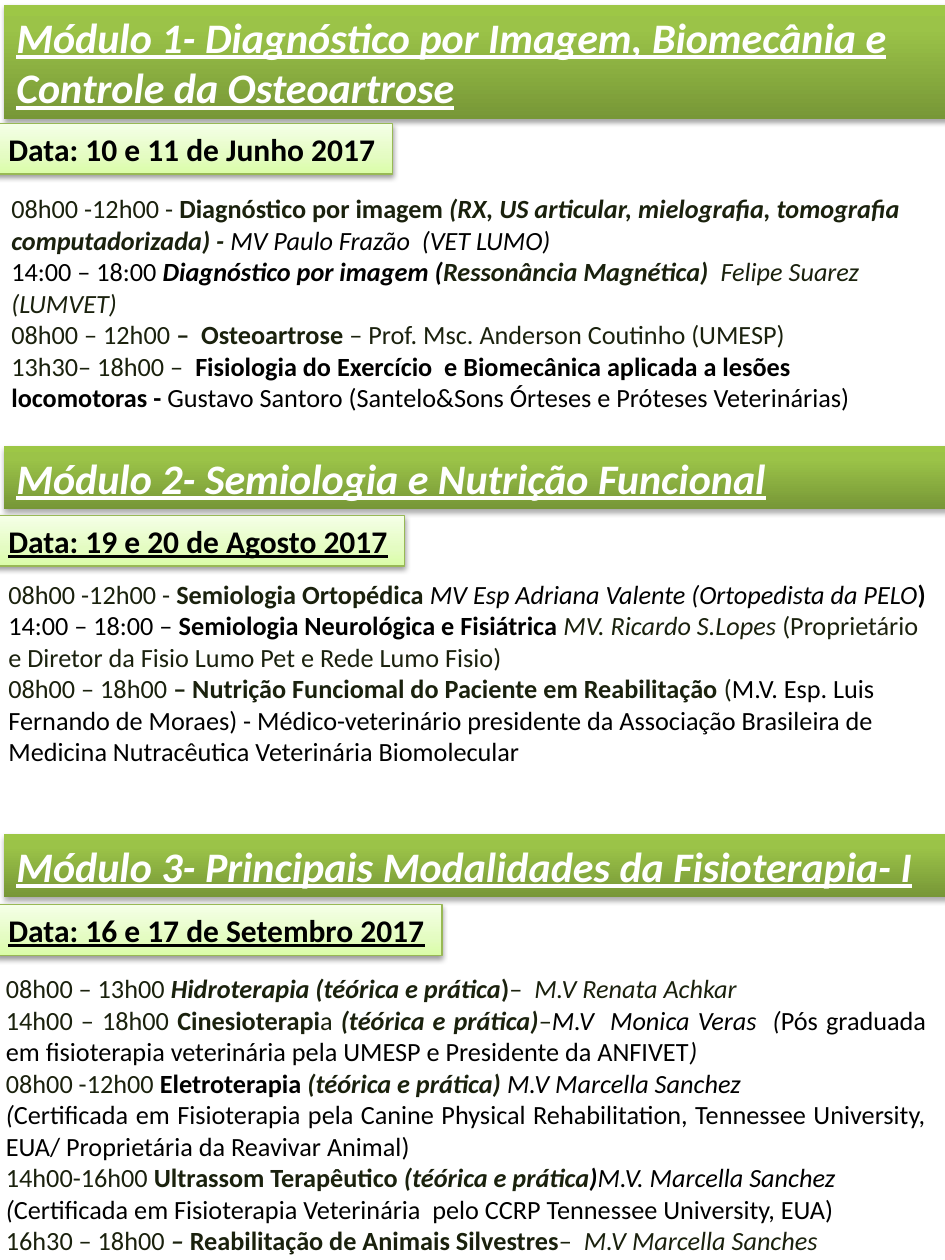
from copy import deepcopy

from lxml import etree
from pptx import Presentation
from pptx.dml.color import RGBColor
from pptx.enum.shapes import MSO_SHAPE
from pptx.enum.text import MSO_ANCHOR, MSO_AUTO_SIZE, PP_ALIGN
from pptx.oxml.ns import qn
from pptx.util import Cm, Pt

RECTANGLE = MSO_SHAPE.RECTANGLE
TOP = MSO_ANCHOR.TOP
GROW = MSO_AUTO_SIZE.SHAPE_TO_FIT_TEXT
LEFT, JUSTIFY = PP_ALIGN.LEFT, PP_ALIGN.JUSTIFY

WHITE = RGBColor(0xFF, 0xFF, 0xFF)
BLACK = RGBColor(0x00, 0x00, 0x00)
OLIVE = RGBColor(0x1A, 0x21, 0x0D)
TAG_EDGE = RGBColor(0x98, 0xB9, 0x55)
BANNER_STOPS = [
    (0, RGBColor(0x77, 0x97, 0x37)),
    (0.8, RGBColor(0x9B, 0xC3, 0x48)),
    (1, RGBColor(0x9D, 0xC7, 0x46)),
]
TAG_STOPS = [
    (0, RGBColor(0xDA, 0xFD, 0xA7)),
    (0.35, RGBColor(0xE4, 0xFC, 0xC2)),
    (1, RGBColor(0xF5, 0xFF, 0xE7)),
]

O, OB, OI, OBI = (OLIVE, ""), (OLIVE, "b"), (OLIVE, "i"), (OLIVE, "bi")
K, KB, KI, KBI = (BLACK, ""), (BLACK, "b"), (BLACK, "i"), (BLACK, "bi")

MODULES = [
    {
        "title": ("Módulo 1- Diagnóstico por Imagem, Biomecânia e Controle da Osteoartrose", 0.1, 2.31),
        "date": ("Data: 10 e 11 de Junho 2017", 2.49, 8, False),
        "box": (-0.02, 3.76, 4.75, LEFT),
        "sessions": [
            [("08h00 -12h00 - ", O), ("Diagnóstico por imagem ", OB),
             ("(RX, US articular, mielografia, tomografia computadorizada) - ", OBI),
             ("MV Paulo Frazão  (VET LUMO)", KI)],
            [("14:00 – 18:00 ", K), ("Diagnóstico por imagem (", KBI),
             ("Ressonância Magnética)  ", OBI), ("Felipe Suarez (LUMVET)", OI)],
            [("08h00 – 12h00 ", O), ("–  Osteoartrose ", OB),
             ("– Prof. Msc. Anderson Coutinho (UMESP)", O)],
            [("13h30– 18h00 –  ", O),
             ("Fisiologia do Exercício  e Biomecânica aplicada a lesões locomotoras - ", KB),
             ("Gustavo Santoro (Santelo&Sons Órteses e Próteses Veterinárias)", K)],
        ],
    },
    {
        "title": ("Módulo 2- Semiologia e Nutrição Funcional", 8.99, 1.27),
        "date": ("Data: 19 e 20 de Agosto 2017", 10.39, 8.23, True),
        "box": (-0.08, 11.53, 6.68, LEFT),
        "sessions": [
            [("08h00 -12h00 - ", O), ("Semiologia Ortopédica ", OB),
             ("MV Esp Adriana Valente (Ortopedista da PELO", KI), (")", KB)],
            [("14:00 – 18:00 – ", K), ("Semiologia Neurológica e Fisiátrica ", KB),
             ("MV. Ricardo S.Lopes ", OI),
             ("(Proprietário e Diretor da Fisio Lumo Pet e Rede Lumo Fisio)", O)],
            [("08h00 – 18h00 ", O),
             ("– Nutrição Funciomal do Paciente em Reabilitação ", OB), ("(", O),
             ("M.V. Esp. Luis Fernando de Moraes) - Médico-veterinário presidente da "
              "Associação Brasileira de Medicina Nutracêutica Veterinária Biomolecular", K)],
        ],
    },
    {
        "title": ("Módulo 3- Principais Modalidades da Fisioterapia- I", 16.81, 1.27),
        "date": ("Data: 16 e 17 de Setembro 2017", 18.24, 8.99, True),
        "box": (-0.13, 19.48, 6.02, JUSTIFY),
        "sessions": [
            [("08h00 – 13h00 ", O), ("Hidroterapia (téórica e prática", OBI), (")", OB),
             ("–  ", O), ("M.V Renata Achkar", OI)],
            [("14h00 – 18h00 ", O), ("Cinesioterapi", OB), ("a ", O),
             ("(téórica e prática)", OBI), ("–", O), ("M.V  Monica Veras  (", KI),
             ("Pós graduada em fisioterapia veterinária pela UMESP e Presidente da ANFIVET", K),
             (")", KI)],
            [("08h00 -12h00 ", O), ("Eletroterapia ", KB), ("(téórica e prática) ", OBI),
             ("M.V Marcella Sanchez", KI)],
            [("(", KI),
             ("Certificada em Fisioterapia pela Canine Physical Rehabilitation, "
              "Tennessee University, EUA/ Proprietária da Reavivar Animal)", K)],
            [("14h00-16h00 ", O), ("Ultrassom Terapêutico ", OB),
             ("(téórica e prática", OBI), (")", KBI), ("M.V. Marcella Sanchez", KI)],
            [("(", KI),
             ("Certificada em Fisioterapia Veterinária  pelo CCRP Tennessee University, EUA)", K)],
            [("16h30 – 18h00 ", O), ("– ", OBI), ("Reabilitação de Animais Silvestres", OB),
             ("–  ", O), ("M.V Marcella Sanches", OI)],
        ],
    },
]


class ProgrammeSlide:
    """Draws the course programme in one shared style on the current slide."""

    font_name = "Calibri"
    page_width = Cm(19.05)

    def __init__(self, slide):
        self.slide = slide

    def add_words(self, paragraph, text, color, **values):
        run = paragraph.add_run()
        run.text = text
        run.font.color.rgb = color
        for name, value in {"name": self.font_name, **values}.items():
            setattr(run.font, name, value)

    def frame(self, shape, wrap=True):
        values = {"word_wrap": wrap, "auto_size": GROW, "vertical_anchor": TOP}
        for name, value in values.items():
            setattr(shape.text_frame, name, value)
        return shape.text_frame

    def panel(self, left, top, width, height, stops, opacity, distance):
        panel = self.slide.shapes.add_shape(RECTANGLE, left, top, width, height)
        panel.fill.gradient()
        panel.fill.gradient_angle = 90
        stop_list = panel._element.spPr.find(f".//{qn('a:gsLst')}")
        stop_list.append(deepcopy(stop_list[0]))
        for stop, (position, color) in zip(panel.fill.gradient_stops, stops):
            stop.position = position
            stop.color.rgb = color
        panel.line.fill.background()
        panel.shadow.inherit = False
        effects = panel._element.spPr.find(qn("a:effectLst"))
        shadow = etree.SubElement(
            effects, qn("a:outerShdw"), blurRad=str(Pt(3.1)), dist=str(Pt(distance)),
            dir="5400000", rotWithShape="0")
        tint = etree.SubElement(shadow, qn("a:srgbClr"), val=str(BLACK))
        etree.SubElement(tint, qn("a:alpha"), val=str(opacity * 1000))
        return panel

    def banner(self, title, top, height):
        banner = self.panel(Cm(0.08), Cm(top), self.page_width, Cm(height), BANNER_STOPS, 35, 1.8)
        paragraph = self.frame(banner).paragraphs[0]
        paragraph.alignment = LEFT
        self.add_words(paragraph, title, WHITE, size=Pt(24), bold=True, italic=True, underline=True)

    def date_tag(self, date, top, width, underline):
        tag = self.panel(Cm(-0.08), Cm(top), Cm(width), Cm(1.02), TAG_STOPS, 38, 1.6)
        tag.line.color.rgb = TAG_EDGE
        tag.line.width = Pt(0.75)
        paragraph = self.frame(tag, wrap=False).paragraphs[0]
        paragraph.alignment = LEFT
        self.add_words(paragraph, date, BLACK, size=Pt(18), bold=True, underline=underline)

    def schedule(self, sessions, left, top, height, alignment):
        box = self.slide.shapes.add_textbox(Cm(left), Cm(top), self.page_width, Cm(height))
        frame = self.frame(box)
        for index, session in enumerate(sessions):
            paragraph = frame.add_paragraph() if index else frame.paragraphs[0]
            paragraph.alignment = alignment
            for text, (color, marks) in session:
                self.add_words(paragraph, text, color, size=Pt(15),
                               bold="b" in marks, italic="i" in marks)


def main():
    presentation = Presentation()
    presentation.slide_width = Cm(19.05)
    presentation.slide_height = Cm(25.4)
    programme = ProgrammeSlide(presentation.slides.add_slide(presentation.slide_layouts[6]))
    for module in MODULES:
        programme.banner(*module["title"])
        programme.date_tag(*module["date"])
        programme.schedule(module["sessions"], *module["box"])
    presentation.save("out.pptx")


if __name__ == "__main__":
    main()
